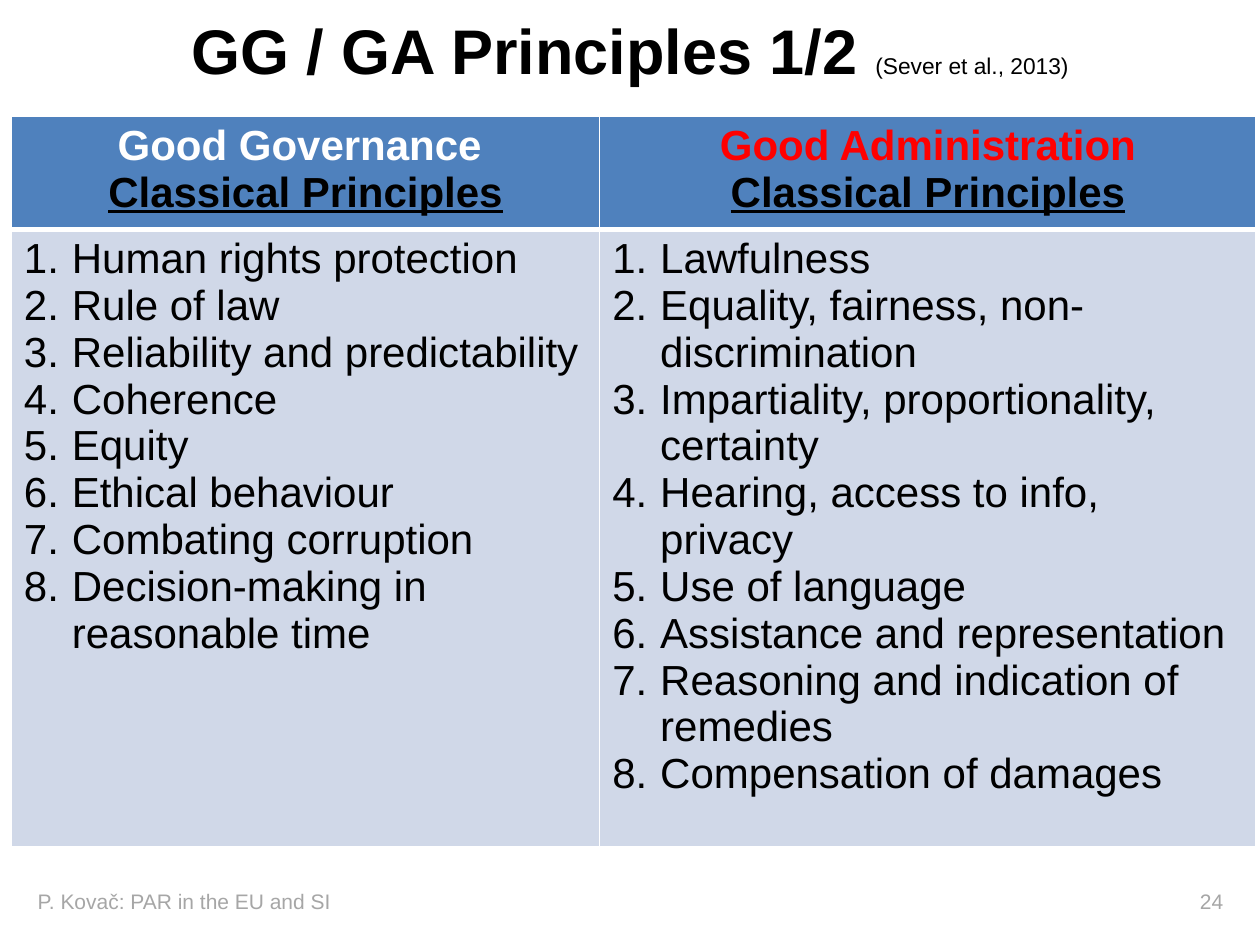
import pptx
import pptx.dml.color
import pptx.enum.text
import pptx.oxml.ns
import pptx.util
from dataclasses import dataclass
from lxml import etree
from pptx.util import Inches

TITLE = "GG / GA Principles 1/2 "
CITATION = "(Sever et al., 2013)"
FOOTER = "P. Kovač: PAR in the EU and SI"
PAGE_NUMBER = "24"
SUBHEADING = "Classical Principles"
HEADINGS = ["Good Governance ", "Good Administration"]
PRINCIPLES = [
    [
        "Human rights protection",
        "Rule of law",
        "Reliability and predictability",
        "Coherence",
        "Equity",
        "Ethical behaviour",
        "Combating corruption",
        "Decision-making in reasonable time",
    ],
    [
        "Lawfulness",
        "Equality, fairness, non-discrimination",
        "Impartiality, proportionality, certainty",
        "Hearing, access to info, privacy",
        "Use of language",
        "Assistance and representation",
        "Reasoning and indication of remedies",
        "Compensation of damages",
    ],
]
COLUMN_WIDTHS = [4.67, 5.21]
ROW_HEIGHTS = [0.83, 4.68]
HANGING_INDENT = 0.38
PAGE_NUMBER_TAB = 9.41


@dataclass(frozen=True)
class Theme:
    font: str = "Arial"
    text: str = "000000"
    headings: tuple = ("FFFFFF", "FF0000")
    header_fill: str = "4F81BD"
    body_fill: str = "D0D8E8"
    border: str = "FFFFFF"
    footer: str = "A6A6A6"
    title_size: int = 36
    citation_size: int = 13
    table_size: int = 24
    footer_size: int = 12


THEME = Theme()


def color(value):
    return pptx.dml.color.RGBColor.from_string(value)


def add_element(parent, tag, **attributes):
    return etree.SubElement(parent, pptx.oxml.ns.qn(tag), attributes)


def style_font(font, size, value, bold=False, underline=False):
    font.name = THEME.font
    font.size = pptx.util.Pt(size)
    font.color.rgb = color(value)
    font.bold = bold
    font.underline = underline


def next_paragraph(text_frame, index):
    return text_frame.add_paragraph() if index else text_frame.paragraphs[0]


def add_text_box(slide, left, top, width, height):
    shape = slide.shapes.add_textbox(*map(Inches, (left, top, width, height)))
    shape.text_frame.word_wrap = True
    shape.text_frame.vertical_anchor = pptx.enum.text.MSO_ANCHOR.MIDDLE
    return shape.text_frame.paragraphs[0]


def add_title(slide):
    paragraph = add_text_box(slide, 0, 0, 10, 0.78)
    paragraph.alignment = pptx.enum.text.PP_ALIGN.CENTER
    for text, size, bold in (
        (TITLE, THEME.title_size, True),
        (CITATION, THEME.citation_size, False),
    ):
        run = paragraph.add_run()
        run.text = text
        style_font(run.font, size, THEME.text, bold)


def add_footer(slide):
    paragraph = add_text_box(slide, 0.2, 6.95, 9.72, 0.4)
    tabs = add_element(paragraph._p.get_or_add_pPr(), "a:tabLst")
    add_element(tabs, "a:tab", pos=str(Inches(PAGE_NUMBER_TAB)), algn="r")
    paragraph.add_run().text = f"{FOOTER}\t{PAGE_NUMBER}"
    style_font(paragraph.font, THEME.footer_size, THEME.footer)


def style_cell(cell, fill, bottom_width):
    properties = cell._tc.get_or_add_tcPr()
    for side, width in (("L", 1), ("R", 1), ("T", 1), ("B", bottom_width)):
        line = add_element(properties, f"a:ln{side}", w=str(pptx.util.Pt(width)))
        add_element(add_element(line, "a:solidFill"), "a:srgbClr", val=THEME.border)
    cell.fill.solid()
    cell.fill.fore_color.rgb = color(fill)


def fill_heading(cell, heading, heading_color):
    lines = [(heading, heading_color, False), (SUBHEADING, THEME.text, True)]
    for index, (text, value, underline) in enumerate(lines):
        paragraph = next_paragraph(cell.text_frame, index)
        paragraph.alignment = pptx.enum.text.PP_ALIGN.CENTER
        paragraph.add_run().text = text
        style_font(paragraph.font, THEME.table_size, value, True, underline)


def fill_principles(cell, principles):
    for index, text in enumerate(principles):
        paragraph = next_paragraph(cell.text_frame, index)
        properties = paragraph._p.get_or_add_pPr()
        properties.set("marL", str(Inches(HANGING_INDENT)))
        properties.set("indent", str(-Inches(HANGING_INDENT)))
        add_element(properties, "a:buFont", typeface=THEME.font)
        add_element(properties, "a:buAutoNum", type="arabicPeriod")
        paragraph.add_run().text = text
        style_font(paragraph.font, THEME.table_size, THEME.text)


def add_principles_table(slide):
    table = slide.shapes.add_table(
        len(ROW_HEIGHTS), len(COLUMN_WIDTHS), Inches(0.09), Inches(0.92),
        Inches(sum(COLUMN_WIDTHS)), Inches(sum(ROW_HEIGHTS)),
    ).table
    for row, height in zip(table.rows, ROW_HEIGHTS):
        row.height = Inches(height)
    for index, width in enumerate(COLUMN_WIDTHS):
        table.columns[index].width = Inches(width)
        header, body = table.cell(0, index), table.cell(1, index)
        style_cell(header, THEME.header_fill, 3)
        style_cell(body, THEME.body_fill, 1)
        fill_heading(header, HEADINGS[index], THEME.headings[index])
        fill_principles(body, PRINCIPLES[index])


def main():
    presentation = pptx.Presentation()
    presentation.slide_width = Inches(10)
    presentation.slide_height = Inches(7.5)
    slide = presentation.slides.add_slide(presentation.slide_layouts[6])
    add_title(slide)
    add_principles_table(slide)
    add_footer(slide)
    presentation.save("out.pptx")


if __name__ == "__main__":
    main()
